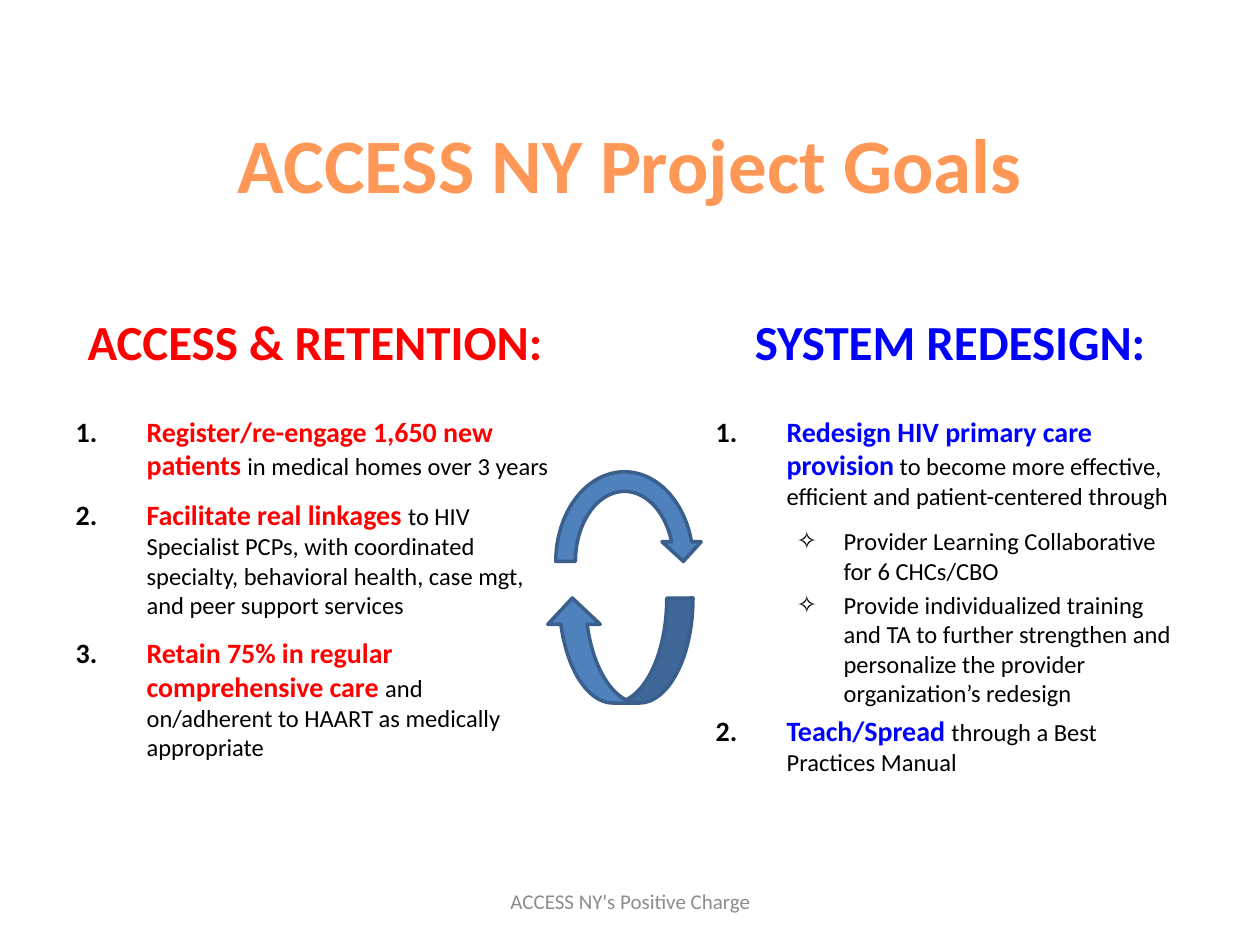
from lxml import etree
from pptx import Presentation
from pptx.dml.color import RGBColor
from pptx.enum.shapes import MSO_SHAPE
from pptx.enum.text import MSO_ANCHOR, MSO_AUTO_SIZE, PP_ALIGN
from pptx.oxml.ns import qn
from pptx.util import Pt

PX = 914400 / 126
FONT = "Calibri"
CENTER, LEFT = PP_ALIGN.CENTER, PP_ALIGN.LEFT
MIDDLE = MSO_ANCHOR.MIDDLE
FIXED = MSO_AUTO_SIZE.NONE
ARC, CURVE = MSO_SHAPE.CIRCULAR_ARROW, MSO_SHAPE.CURVED_DOWN_ARROW

BLACK, RED, BLUE = "000000", "FF0000", "0000FF"
ORANGE, GRAY = "FF9856", "8C8C8C"
FILL, EDGE = "4F81BD", "3A5F8C"

# Each entry is (key phrase, rest, sub-points).
ACCESS = [
    ("Register/re-engage 1,650 new patients ",
     "in medical homes over 3 years", []),
    ("Facilitate real linkages ",
     "to HIV Specialist PCPs, with coordinated specialty, behavioral health, "
     "case mgt, and peer support services", []),
    ("Retain 75% in regular comprehensive care ",
     "and on/adherent to HAART as medically appropriate", []),
]
REDESIGN = [
    ("Redesign HIV primary care provision",
     " to become more effective, efficient and patient-centered through",
     ["Provider Learning Collaborative for 6 CHCs/CBO",
      "Provide individualized training and TA to further strengthen and "
      "personalize the provider organization’s redesign"]),
    ("Teach/Spread ", "through a Best Practices Manual", []),
]


def emu(px):
    return round(px * PX)


def rgb(code):
    return RGBColor.from_string(code)


def place(shape, box):
    shape.left, shape.top, shape.width, shape.height = map(emu, box)


def style(run, size, color, bold=False):
    font = run.font
    font.name, font.size, font.bold = FONT, Pt(size), bold
    font.color.rgb = rgb(color)


def add_run(para, text, size, color, bold=False):
    run = para.add_run()
    run.text = text
    style(run, size, color, bold)


def bullet(para, left, hang, kind, **attrs):
    """Set the indent in px and the bullet; spacing must be set before."""
    props = para._p.get_or_add_pPr()
    props.set("marL", str(emu(left)))
    props.set("indent", str(-emu(hang)))
    if kind != "a:buNone":
        tint = etree.SubElement(props, qn("a:buClr"))
        etree.SubElement(tint, qn("a:srgbClr"), val=BLACK)
    etree.SubElement(props, qn(kind), **attrs)


def one_line(shape, box, text, size, color, bold=False):
    place(shape, box)
    frame = shape.text_frame
    frame.text = text
    frame.word_wrap = True
    frame.auto_size = FIXED
    frame.vertical_anchor = MIDDLE
    para = frame.paragraphs[0]
    para.alignment = CENTER
    style(para.runs[0], size, color, bold)


def goals(holder, box, head, items, color):
    """Fill a body placeholder with a heading and numbered goals."""
    place(holder, box)
    frame = holder.text_frame
    frame.text = head
    frame.auto_size = FIXED
    para = frame.paragraphs[0]
    para.alignment = CENTER
    para.space_after = Pt(22)
    bullet(para, 0, 0, "a:buNone")
    style(para.runs[0], 28, color, True)
    for key, rest, subs in items:
        para = frame.add_paragraph()
        para.alignment = LEFT
        para.space_after = Pt(6)
        bullet(para, 71, 71, "a:buAutoNum", type="arabicPeriod")
        add_run(para, key, 16, color, True)
        add_run(para, rest, 14, BLACK)
        for text in subs:
            para = frame.add_paragraph()
            para.text = text
            para.level = 1
            bullet(para, 128, 47, "a:buChar", char="✧")
            style(para.runs[0], 14, BLACK)


def cycle(slide, box):
    """Draw two curved arrows that turn around each other."""
    x, y, w, h = box
    parts = [(ARC, (x, y, w, 199), 0),
             (CURVE, (x, y + h - 105, w - 10, 105), 180)]
    for kind, area, turn in parts:
        arrow = slide.shapes.add_shape(kind, *map(emu, area))
        arrow.rotation = turn
        arrow.shadow.inherit = False
        arrow.fill.solid()
        arrow.fill.fore_color.rgb = rgb(FILL)
        arrow.line.color.rgb = rgb(EDGE)
        arrow.line.width = Pt(2)


def main():
    deck = Presentation()
    deck.slide_width, deck.slide_height = emu(1260), emu(945)
    slide = deck.slides.add_slide(deck.slide_layouts[3])
    title, left, right = slide.placeholders
    one_line(title, (63, 84, 1134, 158), "ACCESS NY Project Goals",
             44, ORANGE, True)
    goals(left, (63, 305, 504, 539), "ACCESS & RETENTION:", ACCESS, RED)
    goals(right, (703, 305, 494, 551), "SYSTEM REDESIGN:", REDESIGN, BLUE)
    foot = slide.shapes.add_textbox(0, 0, 0, 0)
    one_line(foot, (431, 876, 399, 50), "ACCESS NY's Positive Charge",
             12, GRAY)
    cycle(slide, (546, 462, 157, 241))
    deck.save("out.pptx")


if __name__ == "__main__":
    main()
